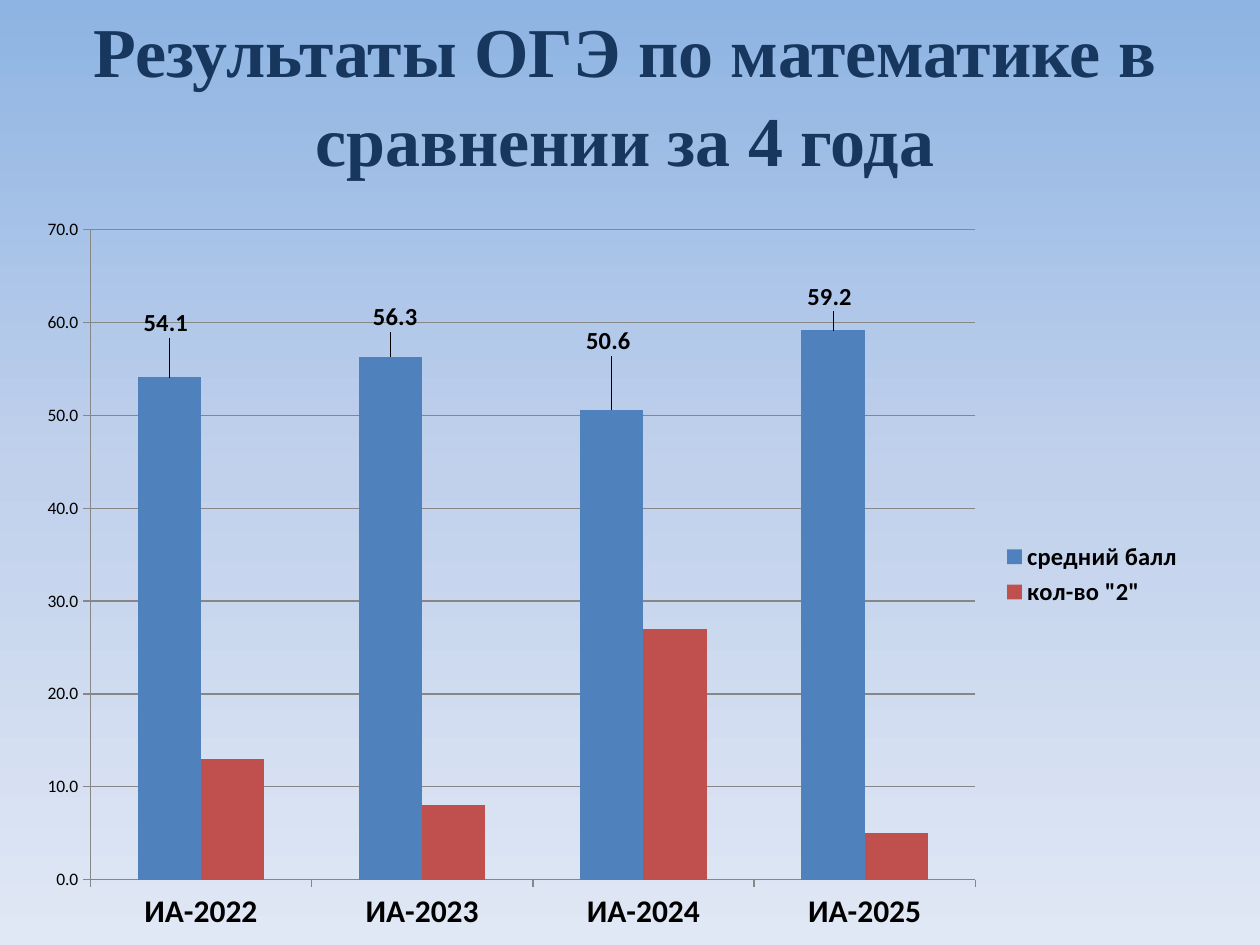
from copy import deepcopy

from lxml import etree
from pptx import Presentation
from pptx.chart.data import CategoryChartData
from pptx.dml.color import RGBColor
from pptx.enum.chart import XL_CHART_TYPE, XL_LABEL_POSITION, XL_LEGEND_POSITION
from pptx.enum.text import MSO_ANCHOR, PP_ALIGN
from pptx.oxml.ns import qn
from pptx.util import Cm, Pt

COLUMNS = XL_CHART_TYPE.COLUMN_CLUSTERED
OUTSIDE = XL_LABEL_POSITION.OUTSIDE_END
RIGHT = XL_LEGEND_POSITION.RIGHT
CENTER = PP_ALIGN.CENTER
MIDDLE = MSO_ANCHOR.MIDDLE

NAVY = RGBColor(0x17, 0x37, 0x5E)
BLACK = RGBColor(0x00, 0x00, 0x00)
GRAY = RGBColor(0x87, 0x87, 0x87)
BLUE = RGBColor(0x4F, 0x81, 0xBD)
RED = RGBColor(0xC0, 0x50, 0x4D)
SKY_STOPS = [
    (0, RGBColor(0x8E, 0xB4, 0xE3)),
    (0.5, RGBColor(0xC1, 0xD1, 0xEC)),
    (1, RGBColor(0xE0, 0xE8, 0xF5)),
]

YEARS = ["ИА-2022", "ИА-2023", "ИА-2024", "ИА-2025"]
SERIES = [
    ("средний балл", (54.1, 56.3, 50.6, 59.2), BLUE),
    ('кол-во "2"', (13, 8, 27, 5), RED),
]
LABEL_SHIFTS = [(-0.003, -0.046), (0.004, -0.027), (-0.003, -0.066), (-0.003, -0.018)]


def paint_background(slide):
    """Fill the slide with a vertical three-stop gradient."""
    fill = slide.background.fill
    fill.gradient()
    fill.gradient_angle = 270
    stop_list = slide.element.find(".//" + qn("a:gsLst"))
    stop_list.append(deepcopy(stop_list[-1]))
    for stop, (position, color) in zip(fill.gradient_stops, SKY_STOPS):
        stop.position = position
        stop.color.rgb = color


def set_font(font, size, bold=False, color=BLACK, name="Calibri"):
    """Apply the typeface, size, weight and colour to a font."""
    font.name = name
    font.size = Pt(size)
    font.bold = bold
    font.color.rgb = color


def set_line(line):
    """Apply the thin gray line of axes and gridlines."""
    line.color.rgb = GRAY
    line.width = Pt(0.75)


def make_layout(**values):
    """Return a manual chart layout holding the given values."""
    layout = etree.Element(qn("c:layout"))
    manual = etree.SubElement(layout, qn("c:manualLayout"))
    for tag, value in values.items():
        etree.SubElement(manual, qn("c:" + tag)).set("val", str(value))
    return layout


def add_title(slide, left, top, width, height):
    """Add the centred heading in the given box."""
    tf = slide.shapes.add_textbox(left, top, width, height).text_frame
    tf.word_wrap = True
    tf.vertical_anchor = MIDDLE
    p = tf.paragraphs[0]
    p.alignment = CENTER
    p.line_spacing = 1.06
    r = p.add_run()
    r.text = "Результаты ОГЭ по математике в сравнении за 4 года"
    set_font(r.font, 40, True, NAVY, "Times New Roman")


def label_scores(chart, series):
    """Show the average scores above their columns, each shifted a little."""
    labels = series.data_labels
    labels.show_value = True
    labels.number_format = "0.0"
    labels.number_format_is_linked = False
    set_font(labels.font, 14, True)
    for i in range(len(YEARS)):
        label = series.points[i].data_label
        set_font(label.font, 14, True)
        label.position = OUTSIDE
    for label, (x, y) in zip(chart.element.iter(qn("c:dLbl")), LABEL_SHIFTS):
        label.insert(1, make_layout(x=x, y=y))


def add_results_chart(slide, left, top, width, height):
    """Add the column chart of yearly results in the given box."""
    data = CategoryChartData(number_format="0.0")
    data.categories = YEARS
    for name, values, _ in SERIES:
        data.add_series(name, values)
    chart = slide.shapes.add_chart(COLUMNS, left, top, width, height, data).chart
    chart.has_title = False
    set_font(chart.font, 10)

    chart.has_legend = True
    chart.legend.position = RIGHT
    chart.legend.include_in_layout = False
    set_font(chart.legend.font, 14, True)

    years, scores = chart.category_axis, chart.value_axis
    set_font(years.tick_labels.font, 18, True)
    set_font(scores.tick_labels.font, 10)
    scores.tick_labels.number_format = "0.0"
    scores.tick_labels.number_format_is_linked = False
    scores.minimum_scale, scores.maximum_scale, scores.major_unit = 0, 70, 10
    for line in (years.format.line, scores.format.line, scores.major_gridlines.format.line):
        set_line(line)

    plot = chart.plots[0]
    plot.gap_width = 150
    plot.overlap = 0
    plot.vary_by_categories = False
    for series, (_, _, color) in zip(plot.series, SERIES):
        series.format.fill.solid()
        series.format.fill.fore_color.rgb = color
    label_scores(chart, plot.series[0])

    area = chart.element.find(".//" + qn("c:plotArea"))
    for layout in area.findall(qn("c:layout")):
        area.remove(layout)
    area.insert(0, make_layout(layoutTarget="inner", xMode="edge", yMode="edge",
                               x=0.056, y=0.035, w=0.756, h=0.877))


def main():
    """Build and save the slide."""
    prs = Presentation()
    prs.slide_width, prs.slide_height = Cm(25.4), Cm(19.05)
    slide = prs.slides.add_slide(prs.slide_layouts[6])
    paint_background(slide)
    add_title(slide, Cm(1.3), Cm(0), Cm(22.6), Cm(3.68))
    add_results_chart(slide, Cm(0.5), Cm(4.11), Cm(23.6), Cm(14.94))
    prs.save("out.pptx")


if __name__ == "__main__":
    main()
